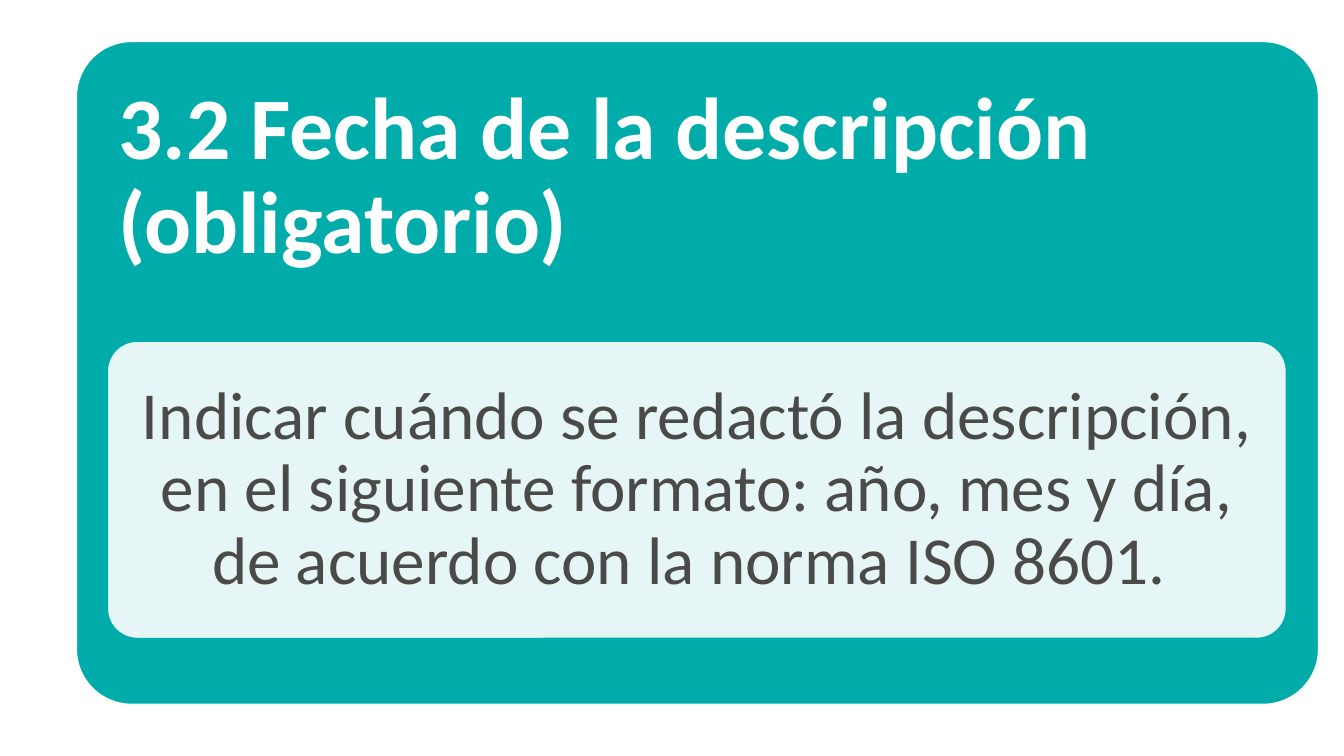
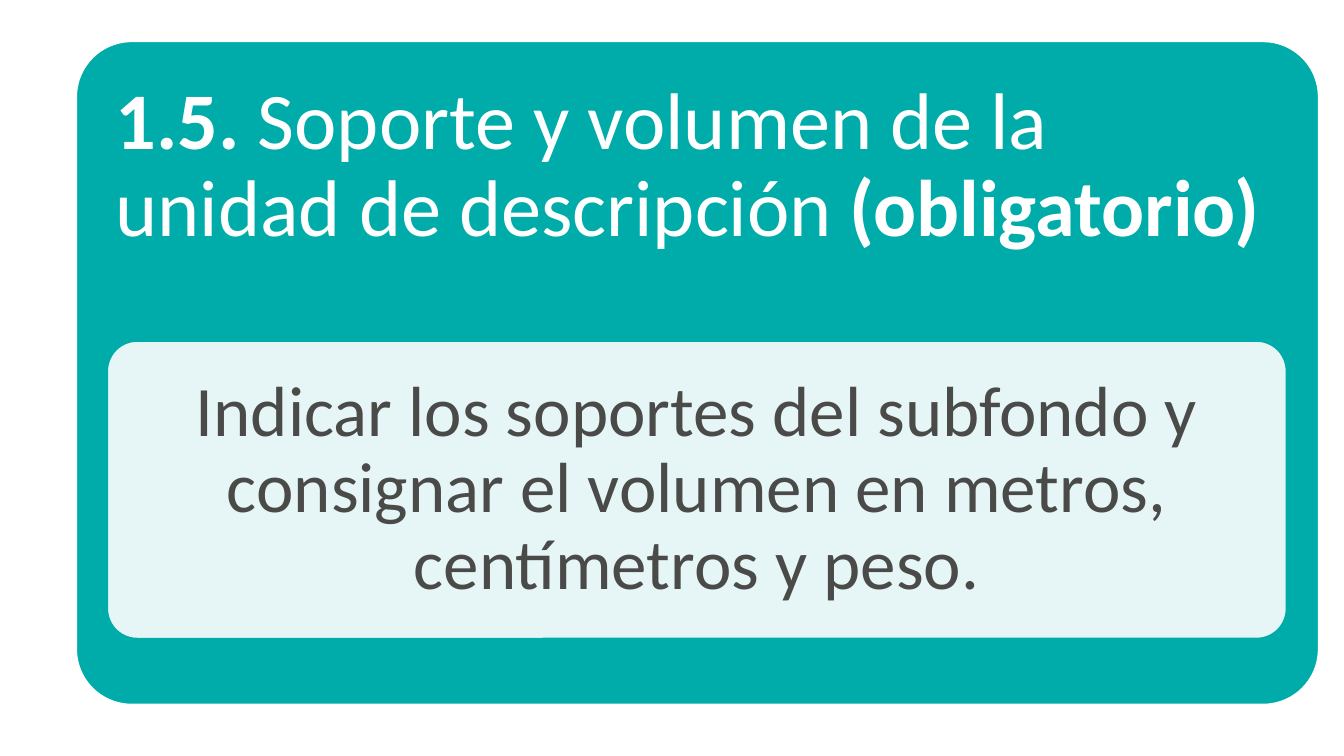
from lxml import etree
from pptx import Presentation
from pptx.dml.color import RGBColor
from pptx.enum.shapes import MSO_SHAPE
from pptx.enum.text import MSO_ANCHOR, MSO_AUTO_SIZE, PP_ALIGN
from pptx.oxml.ns import qn
from pptx.util import Inches, Pt

ROUNDED = MSO_SHAPE.ROUNDED_RECTANGLE
TOP, MIDDLE = MSO_ANCHOR.TOP, MSO_ANCHOR.MIDDLE
LEFT, CENTER = PP_ALIGN.LEFT, PP_ALIGN.CENTER

FONT = "Calibri"
TEAL, WHITE, GRAY = "00ACA9", "FFFFFF", "4A4A49"
SLIDE_W = 10
SLIDE_H = SLIDE_W * 9 / 16
TITLE_ONLY = 5

CARD = (0.56, 0.3, 9.26, 4.95)
PANEL = (0.79, 2.53, 8.79, 2.23)
CARD_RADIUS, PANEL_RADIUS = 0.42, 0.23
CARD_INSET, PANEL_INSET = 0.12, 0.07
TITLE_BOTTOM = 3.05

SLIDES = [
    {
        "title": [("3.2 Fecha de la descripción (obligatorio)", True)],
        "title_size": 47,
        "title_margin": 0.2,
        "body": "Indicar cuándo se redactó la descripción, en el siguiente formato: "
                "año, mes y día, de acuerdo con la norma ISO 8601. ",
        "body_size": 36,
        "body_margin": 0.15,
    },
    {
        "title": [
            ("1.5. ", True),
            ("Soporte y volumen de la unidad de descripción ", False),
            ("(obligatorio)", True),
        ],
        "title_size": 43,
        "title_margin": 0.18,
        "body": "Indicar los soportes del subfondo y consignar el volumen en metros, "
                "centímetros y peso.",
        "body_size": 38,
        "body_margin": 0.16,
    },
]


def color(value):
    return RGBColor.from_string(value)


def inner(box, inset):
    x, y, w, h = box
    return x + inset, y + inset, w - 2 * inset, h - 2 * inset


def place(sp, box):
    sp.left, sp.top, sp.width, sp.height = map(Inches, box)


def add_rounded(slide, box, radius, fill, line, alpha=None):
    sp = slide.shapes.add_shape(ROUNDED, *map(Inches, box))
    sp.adjustments[0] = radius / min(box[2:])
    sp.shadow.inherit = False
    sp.fill.solid()
    sp.fill.fore_color.rgb = color(fill)
    sp.line.color.rgb = color(line)
    sp.line.width = Pt(2)
    if alpha:
        srgb = sp._element.spPr.find(qn("a:solidFill")).find(qn("a:srgbClr"))
        etree.SubElement(srgb, qn("a:alpha")).set("val", str(alpha * 1000))


def write(sp, runs, size, ink, align, anchor, margin, bottom):
    tf = sp.text_frame
    tf.word_wrap = True
    tf.auto_size = MSO_AUTO_SIZE.NONE
    tf.vertical_anchor = anchor
    tf.margin_left = tf.margin_top = tf.margin_right = Inches(margin)
    tf.margin_bottom = Inches(bottom)
    p = tf.paragraphs[0]
    p.alignment = align
    p.line_spacing = 0.9
    for text, bold in runs:
        r = p.add_run()
        r.text = text
        r.font.name = FONT
        r.font.size = Pt(size)
        r.font.bold = bold
        r.font.color.rgb = color(ink)


def build_slide(prs, content):
    slide = prs.slides.add_slide(prs.slide_layouts[TITLE_ONLY])
    title = slide.shapes.title
    add_rounded(slide, CARD, CARD_RADIUS, TEAL, WHITE)
    slide.shapes._spTree.append(title._element)
    place(title, inner(CARD, CARD_INSET))
    write(title, content["title"], content["title_size"], WHITE, LEFT, TOP,
          content["title_margin"], TITLE_BOTTOM)

    add_rounded(slide, PANEL, PANEL_RADIUS, WHITE, TEAL, alpha=90)
    body = slide.shapes.add_textbox(*map(Inches, inner(PANEL, PANEL_INSET)))
    write(body, [(content["body"], False)], content["body_size"], GRAY, CENTER, MIDDLE,
          content["body_margin"], content["body_margin"])


def main():
    prs = Presentation()
    prs.slide_width, prs.slide_height = Inches(SLIDE_W), Inches(SLIDE_H)
    for content in SLIDES:
        build_slide(prs, content)
    prs.save("out.pptx")


if __name__ == "__main__":
    main()
